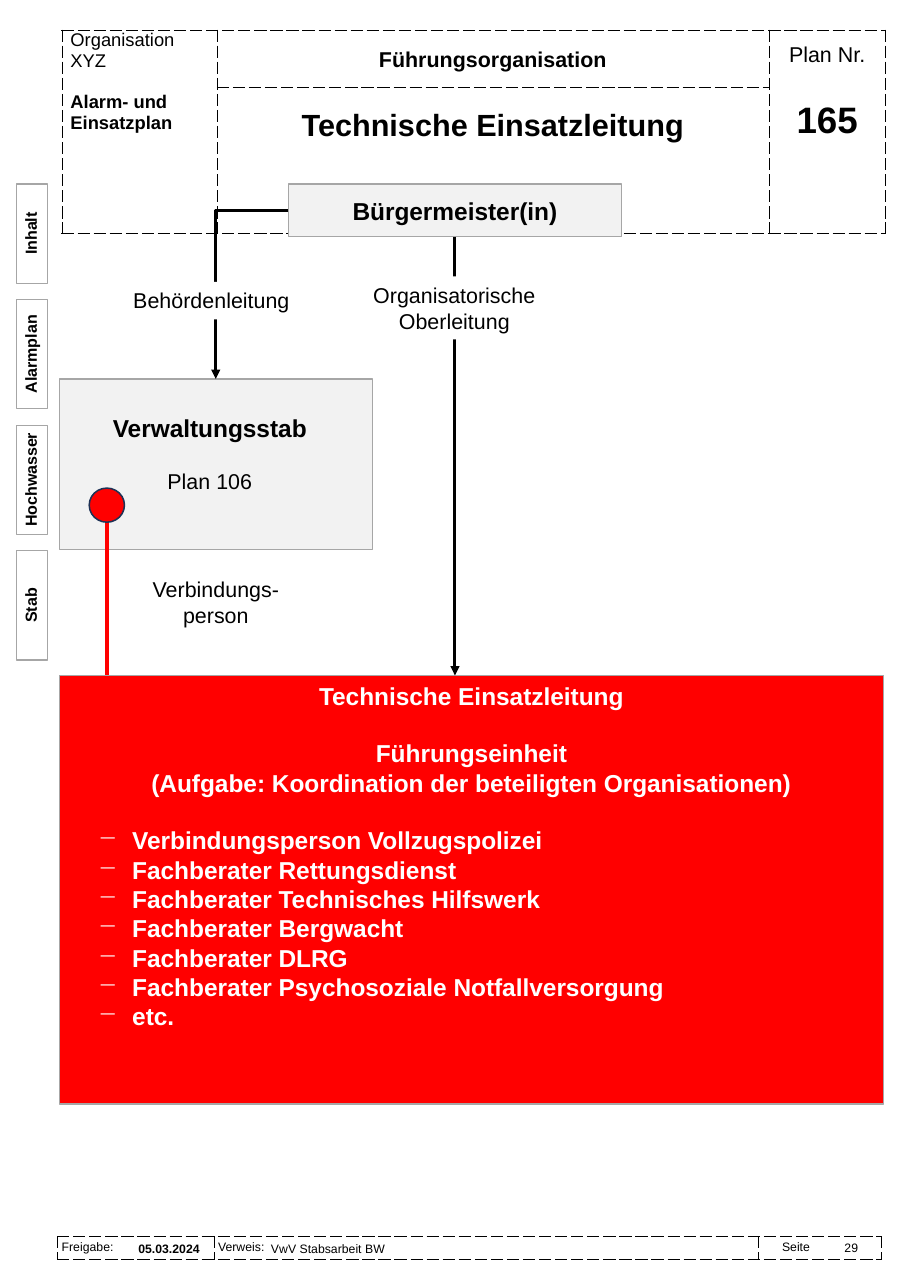
import collections

import lxml.etree
import pptx
import pptx.dml.color
import pptx.enum.shapes
import pptx.enum.text
import pptx.oxml.ns
import pptx.util

SCALE = 9144
FONT = "Arial"
COLORS = {"black": "000000", "white": "FFFFFF", "red": "FF0000",
          "panel": "F2F2F2", "edge": "A6A6A6", "navy": "1E3256"}
SHAPES = pptx.enum.shapes.MSO_SHAPE
CONNECTORS = pptx.enum.shapes.MSO_CONNECTOR
ALIGN = pptx.enum.text.PP_ALIGN
ANCHOR = pptx.enum.text.MSO_ANCHOR
qn = pptx.oxml.ns.qn

Box = collections.namedtuple("Box", "left top width height")
Line = collections.namedtuple(
    "Line", "text size bold align color before spacing bullet",
    defaults=(False, ALIGN.CENTER, "black", 0, None, False))


def px(value):
    """Turn px into EMU."""
    return int(value * SCALE)


def inside(box, left, top, width, height):
    """Return a box placed relative to another box."""
    return Box(box.left + left, box.top + top, width, height)


def emu(box):
    """Return the four lengths of a box in EMU."""
    return [px(value) for value in box]


def rgb(name):
    """Return a named colour."""
    return pptx.dml.color.RGBColor.from_string(COLORS[name])


def write(frame, lines, insets=(0, 0, 0, 0), anchor=ANCHOR.TOP):
    """Write formatted paragraphs into a text frame."""
    frame.word_wrap = True
    frame.auto_size = pptx.enum.text.MSO_AUTO_SIZE.NONE
    frame.vertical_anchor = anchor
    (frame.margin_left, frame.margin_top,
     frame.margin_right, frame.margin_bottom) = [px(inset) for inset in insets]
    write_lines(frame, lines)


def write_lines(frame, lines):
    """Add each line as a paragraph with one run."""
    for index, line in enumerate(lines):
        paragraph = frame.add_paragraph() if index else frame.paragraphs[0]
        paragraph.alignment = line.align
        paragraph.space_before = pptx.util.Pt(line.before)
        if line.spacing:
            paragraph.line_spacing = line.spacing
        if line.bullet:
            properties = paragraph._p.get_or_add_pPr()
            properties.set("marL", str(px(31)))
            properties.set("indent", str(-px(31)))
            lxml.etree.SubElement(properties, qn("a:buChar")).set("char", "−")
        run = paragraph.add_run()
        run.text = line.text
        run.font.name = FONT
        run.font.size = pptx.util.Pt(line.size)
        run.font.bold = line.bold
        run.font.color.rgb = rgb(line.color)


def add_text(slide, box, lines, insets=(0, 0, 0, 0), anchor=ANCHOR.MIDDLE):
    """Add a text box."""
    write(slide.shapes.add_textbox(*emu(box)).text_frame, lines, insets, anchor)


def add_panel(slide, box, fill, edge=None, lines=(), insets=(0, 5, 0, 5),
              anchor=ANCHOR.TOP, kind=SHAPES.RECTANGLE, weight=0.75):
    """Add a filled shape with optional outline and text."""
    shape = slide.shapes.add_shape(kind, *emu(box))
    shape.shadow.inherit = False
    shape.fill.solid()
    shape.fill.fore_color.rgb = rgb(fill)
    if edge:
        shape.line.color.rgb = rgb(edge)
        shape.line.width = pptx.util.Pt(weight)
    else:
        shape.line.fill.background()
    write(shape.text_frame, lines, insets, anchor)
    return shape


def add_line(slide, start, end, color, weight, arrow=False, kind=CONNECTORS.STRAIGHT):
    """Add a connector between two points."""
    points = [px(value) for value in (*start, *end)]
    connector = slide.shapes.add_connector(kind, *points)
    connector.line.color.rgb = rgb(color)
    connector.line.width = pptx.util.Pt(weight)
    if arrow:
        outline = connector.line._get_or_add_ln()
        lxml.etree.SubElement(outline, qn("a:tailEnd")).set("type", "triangle")
    lxml.etree.SubElement(connector._element.spPr, qn("a:effectLst"))
    return connector


def add_border(cell, side):
    """Draw one thin dashed cell border."""
    properties = cell._tc.get_or_add_tcPr()
    border = lxml.etree.SubElement(properties, qn(f"a:{side}"), w="3175")
    fill = lxml.etree.SubElement(border, qn("a:solidFill"))
    lxml.etree.SubElement(fill, qn("a:srgbClr"), val=COLORS["black"])
    lxml.etree.SubElement(border, qn("a:prstDash"), val="sysDash")


def add_grid(slide, box, widths, heights, merged=()):
    """Add an unfilled table with dashed borders."""
    table = slide.shapes.add_table(len(heights), len(widths), *emu(box)).table
    table.first_row = table.horz_banding = False
    for column, width in zip(table.columns, widths):
        column.width = px(width)
    for row, height in zip(table.rows, heights):
        row.height = px(height)
    for column in merged:
        table.cell(0, column).merge(table.cell(len(heights) - 1, column))
    for cell in table.iter_cells():
        for side in ("lnL", "lnR", "lnT", "lnB"):
            if not (cell.is_spanned and side == "lnT"):
                add_border(cell, side)
        cell.fill.background()
    return table


def write_cell(cell, lines, insets):
    """Write paragraphs into a table cell."""
    (cell.margin_left, cell.margin_top,
     cell.margin_right, cell.margin_bottom) = [px(inset) for inset in insets]
    write_lines(cell.text_frame, lines)


def add_header(slide, box):
    """Build the plan header with its title."""
    table = add_grid(slide, box, (141, 501, 106), (52, 133), merged=(0, 2))
    write_cell(table.cell(0, 0), [
        Line("Organisation", 12, align=ALIGN.LEFT),
        Line("XYZ", 12, align=ALIGN.LEFT),
        Line("Alarm- und", 12, True, ALIGN.LEFT, before=13.8),
        Line("Einsatzplan", 12, True, ALIGN.LEFT)], (8, 0, 8, 0))
    write_cell(table.cell(0, 2), [Line("Plan Nr.", 14)], (8, 12, 8, 0))
    add_text(slide, inside(box, 141, 0, 501, 53), [Line("Führungsorganisation", 14, True)])
    add_text(slide, inside(box, 141, 52, 501, 67),
             [Line("Technische Einsatzleitung", 20, True)])
    title = slide.shapes.title
    title.left, title.top, title.width, title.height = emu(inside(box, 642, 51, 106, 65))
    write(title.text_frame, [Line("165", 24, True, spacing=0.9)], anchor=ANCHOR.MIDDLE)


def add_footer(slide, box):
    """Build the release, reference and page line."""
    table = add_grid(slide, box, (142, 494, 112), (21,))
    for column, (label, indent) in enumerate((("Freigabe:", 4), ("Verweis:", 4), ("Seite", 22))):
        write_cell(table.cell(0, column), [Line(label, 8, align=ALIGN.LEFT)], (indent, 4, 4, 4))
    add_text(slide, inside(box, 61, 1, 81, 20), [Line("05.03.2024", 8, True)])
    add_text(slide, inside(box, 190, 2, 444, 19),
             [Line("VwV Stabsarbeit BW", 8, align=ALIGN.LEFT)], (4, 0, 4, 0))
    add_text(slide, inside(box, 690, 4, 45, 13),
             [Line("29", 8, align=ALIGN.RIGHT)], (8, 0, 8, 0), ANCHOR.TOP)


def add_chart_of_command(slide, box):
    """Build the mayor, staff and operations panels with their links."""
    mayor = add_panel(slide, inside(box, 208, 0, 302, 48), "panel", "edge",
                      [Line("Bürgermeister(in)", 16, True)], anchor=ANCHOR.MIDDLE)
    staff = add_panel(slide, inside(box, 0, 177, 284, 155), "panel", "edge", [
        Line("Verwaltungsstab", 16, True), Line("Plan 106", 14, before=16.5)], (0, 31, 11, 5))
    branch = add_line(slide, (box.left + 208, box.top + 24), (box.left + 142, box.top + 177),
                      "black", 2, True, CONNECTORS.ELBOW)
    branch.begin_connect(mayor, 1)
    branch.end_connect(staff, 0)
    branch._element.spPr.find(qn("a:prstGeom")).set("prst", "bentConnector2")
    add_line(slide, (box.left + 43, box.top + 446), (box.left + 43, box.top + 307), "red", 3)
    add_panel(slide, inside(box, 27, 276, 32, 31), "red", "navy", kind=SHAPES.OVAL, weight=1)
    duties = ("Verbindungsperson Vollzugspolizei", "Fachberater Rettungsdienst",
              "Fachberater Technisches Hilfswerk", "Fachberater Bergwacht", "Fachberater DLRG",
              "Fachberater Psychosoziale Notfallversorgung", "etc.")
    heading = [Line(text, 16, True, color="white", before=before) for text, before in (
        ("Technische Einsatzleitung", 0), ("Führungseinheit", 18.4),
        ("(Aufgabe: Koordination der beteiligten Organisationen)", 0))]
    members = [Line(duty, 16, True, ALIGN.LEFT, "white", 0 if index else 18.4, bullet=True)
               for index, duty in enumerate(duties)]
    add_panel(slide, inside(box, 0, 446, 748, 389), "red", "edge",
              heading + members, (35, 5, 35, 5))
    oversight = add_line(slide, (box.left + 359, box.top + 48),
                         (box.left + 359, box.top + 446), "black", 2, True)
    oversight.begin_connect(mayor, 2)
    for text, left, top, width, height, spacing in (
            ("Behördenleitung", 61, 89, 154, 34, None),
            ("Organisatorische Oberleitung", 276, 84, 165, 57, None),
            ("Verbindungs-person", 65, 351, 154, 57, pptx.util.Pt(17))):
        add_panel(slide, inside(box, left, top, width, height), "white",
                  lines=[Line(text, 14, spacing=spacing)])


def add_tabs(slide, box):
    """Build the column of upright index tabs."""
    top = 0
    for label, length in (("Inhalt", 90), ("Alarmplan", 99), ("Hochwasser", 99), ("Stab", 99)):
        place = inside(box, (box.width - length) / 2, top + (length - box.width) / 2,
                       length, box.width)
        tab = add_panel(slide, place, "white", "edge", [Line(label, 10.5, True)], (0, 4, 0, 4))
        tab.rotation = 270
        top += length + 15


def main():
    """Build and save the plan."""
    presentation = pptx.Presentation()
    presentation.slide_width, presentation.slide_height = px(827), px(1169)
    slide = presentation.slides.add_slide(presentation.slide_layouts[5])
    add_header(slide, Box(56, 27, 748, 185))
    add_footer(slide, Box(52, 1122, 748, 21))
    add_chart_of_command(slide, Box(54, 167, 748, 835))
    add_tabs(slide, Box(15, 167, 28, 432))
    presentation.save("out.pptx")


if __name__ == "__main__":
    main()
